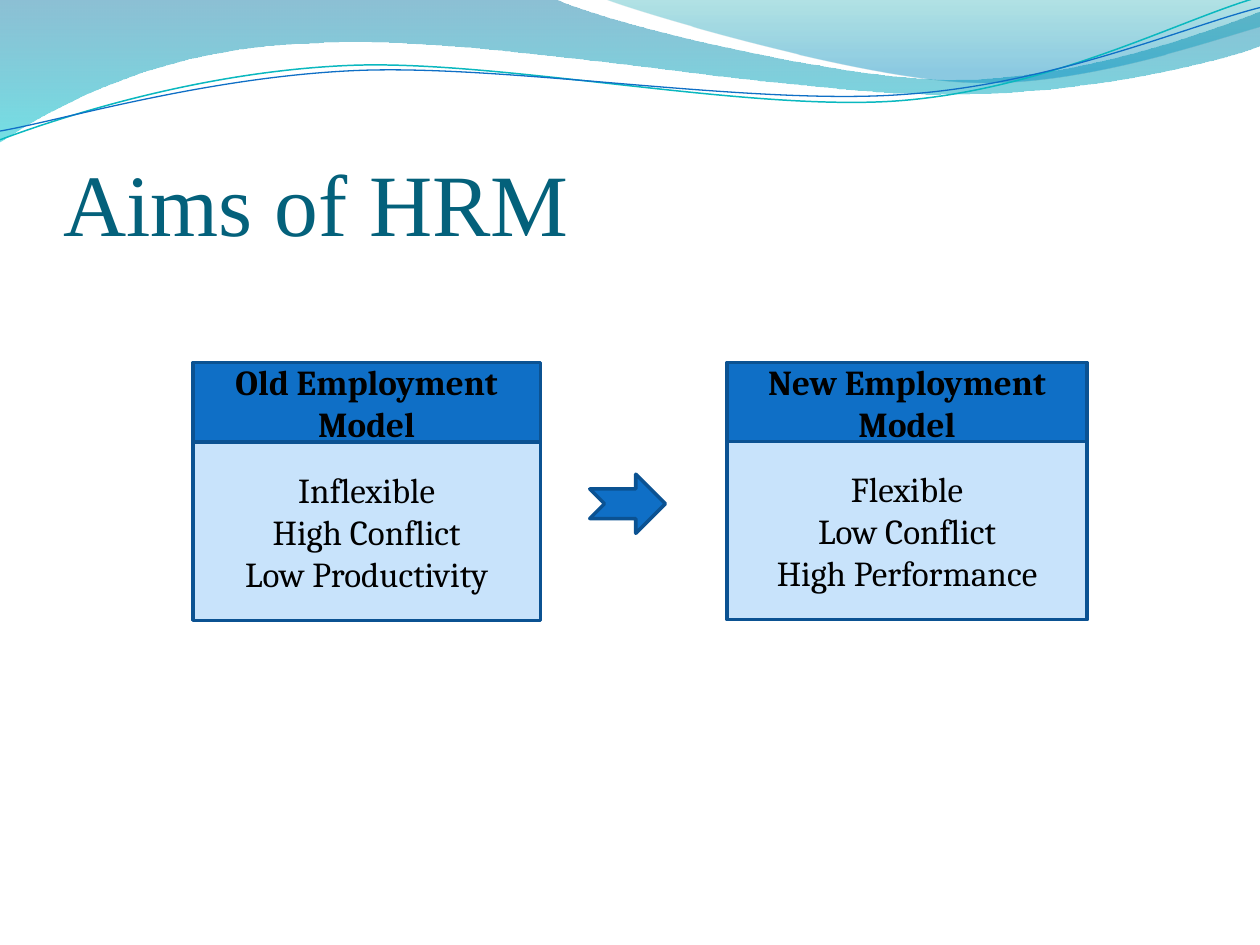
import math

import pptx
import pptx.dml.color
import pptx.enum.shapes
import pptx.enum.text
import pptx.oxml.ns
import pptx.util
from lxml import etree

Pt = pptx.util.Pt
qn = pptx.oxml.ns.qn
SHAPE = pptx.enum.shapes.MSO_SHAPE
ALIGN = pptx.enum.text.PP_ALIGN
ANCHOR = pptx.enum.text.MSO_ANCHOR
COLORS = {
    "title": "04617B", "text": "000000", "header": "0F6FC6",
    "body": "C8E3FB", "border": "0B5292",
    "wave top": "0074A1", "wave bottom": "00C6CF",
    "crest top": "00A1A9", "crest bottom": "008BBF", "teal line": "0AB8BF",
}


def rgb(name):
    return pptx.dml.color.RGBColor.from_string(COLORS[name])


def add_box(shapes, kind, left, top, width, height, fill, lines=(), bold=False):
    shape = shapes.add_shape(kind, Pt(left), Pt(top), Pt(width), Pt(height))
    shape.shadow.inherit = False
    shape.fill.solid()
    shape.fill.fore_color.rgb = rgb(fill)
    shape.line.color.rgb = rgb("border")
    shape.line.width = Pt(2)
    if lines:
        frame = shape.text_frame
        frame.text = "\n".join(lines)
        frame.word_wrap = True
        frame.vertical_anchor = ANCHOR.MIDDLE
        for paragraph in frame.paragraphs:
            paragraph.alignment = ALIGN.CENTER
            font = paragraph.runs[0].font
            font.name, font.size, font.bold = "Cambria", Pt(20), bold
            font.color.rgb = rgb("text")


presentation = pptx.Presentation()
presentation.slide_width, presentation.slide_height = Pt(720), Pt(540)
slide = presentation.slides.add_slide(presentation.slide_layouts[5])

# Waves: a box, then a start point, lines (2 numbers) and Bezier curves (6 numbers).
# Filled waves list gradient stops (color, position, opacity);
# open ones have a line color and width, and a tilted box.
waves = [
    {"box": (-0.7, -0.7, 721.4, 82.1), "tilt": 0,
     "steps": [(0, 0),
               (316.8, -0.7),
               (342.7, 12.2, 478.1, 45.4, 545.8, 45.4),
               (614.2, 45.4, 689.8, 18.7, 720, 6.5),
               (720.7, 25.9),
               (707.8, 31.7, 626.4, 54.7, 537.1, 54),
               (447.8, 54, 275, 20.2, 185, 24.5),
               (92.9, 25.9, 33.1, 59.8, -0.7, 81.4),
               (0, 0)],
     "stops": [("wave top", 0, 45), ("wave bottom", 1, 55)]},
    {"box": (344.9, -0.7, 375.1, 50.4), "tilt": 0,
     "steps": [(344.9, -0.7),
               (366.5, 7.9, 491, 44.6, 553.7, 46.8),
               (616.3, 49.7, 691.9, 23, 720, 15.1),
               (720, 0),
               (344.9, -0.7)],
     "stops": [("crest top", 0, 30), ("crest bottom", 0.8, 45)]},
    {"box": (-1.4, 15.8, 721.4, 51.1), "tilt": -2.7,
     "steps": [(0, 79.9),
               (34.6, 67, 113.8, 41, 199.4, 37.4),
               (284.4, 33.8, 427, 64.1, 513.4, 57.6),
               (599.8, 51.1, 675.4, 10.8, 718.6, -1.4)],
     "line": ("teal line", 0.85)},
    {"box": (-1.4, 21.6, 722.2, 41.8), "tilt": -2.7,
     "steps": [(0, 74.9),
               (33.8, 69.1, 118.1, 43.9, 203.8, 40.3),
               (290.2, 36.7, 429.8, 60.5, 516.2, 54),
               (601.9, 48.2, 677.5, 15.1, 720, 4.3)],
     "line": ("header", 0.75)},
]
for wave in waves:
    left, top, width, height = wave["box"]
    corners = [(Pt(step[-2]), Pt(step[-1])) for step in wave["steps"]]
    builder = slide.shapes.build_freeform(*corners[0])
    builder.add_line_segments(corners[1:], close=False)
    shape = builder.convert_to_shape()
    shape.shadow.inherit = False
    shape.left, shape.top, shape.width, shape.height = map(Pt, wave["box"])
    shape.rotation = wave["tilt"] % 360

    # Bend the outline, with points measured inside the untilted box
    outline = shape.element.find(".//" + qn("a:path"))
    outline.set("w", str(Pt(width)))
    outline.set("h", str(Pt(height)))
    for child in list(outline):
        outline.remove(child)
    cosine, sine = (f(math.radians(-wave["tilt"])) for f in (math.cos, math.sin))
    for index, step in enumerate(wave["steps"]):
        tag = "a:cubicBezTo" if len(step) == 6 else "a:lnTo" if index else "a:moveTo"
        node = etree.SubElement(outline, qn(tag))
        for x, y in zip(step[::2], step[1::2]):
            dx, dy = x - left - width / 2, y - top - height / 2
            point = etree.SubElement(node, qn("a:pt"))
            point.set("x", str(Pt(width / 2 + dx * cosine - dy * sine)))
            point.set("y", str(Pt(height / 2 + dx * sine + dy * cosine)))

    if "stops" in wave:
        etree.SubElement(outline, qn("a:close"))
        shape.line.fill.background()
        shape.fill.gradient()
        shape.fill.gradient_angle = 270
        for stop, (color, position, opacity) in zip(shape.fill.gradient_stops, wave["stops"]):
            stop.color.rgb = rgb(color)
            stop.position = position
        color_tags = shape.element.spPr.iter(qn("a:srgbClr"))
        for tag, (color, position, opacity) in zip(color_tags, wave["stops"]):
            etree.SubElement(tag, qn("a:alpha")).set("val", str(opacity * 1000))
    else:
        color, line_width = wave["line"]
        shape.fill.background()
        shape.line.color.rgb = rgb(color)
        shape.line.width = Pt(line_width)

# Title, in front of the waves
title = slide.shapes.title
slide.shapes.element.append(title.element)
title.left, title.top, title.width, title.height = Pt(36), Pt(55.4), Pt(648), Pt(90)
frame = title.text_frame
frame.text = "Aims of HRM"
frame.auto_size = pptx.enum.text.MSO_AUTO_SIZE.NONE
frame.word_wrap = True
frame.vertical_anchor = ANCHOR.BOTTOM
frame.margin_left = frame.margin_right = frame.margin_bottom = 0
frame.margin_top = Pt(3.6)
paragraph = frame.paragraphs[0]
paragraph.alignment = ALIGN.LEFT
font = paragraph.runs[0].font
font.name, font.size = "Times New Roman", Pt(50)
font.color.rgb = rgb("title")

# Employment models: a header over a list
models = [
    (110.2, 198.7, 252.6, "Old Employment Model",
     ["Inflexible", "High Conflict", "Low Productivity"]),
    (415.4, 205.9, 252.2, "New Employment Model",
     ["Flexible", "Low Conflict", "High Performance"]),
]
for left, width, list_top, heading, traits in models:
    group = slide.shapes.add_group_shape()
    add_box(group.shapes, SHAPE.RECTANGLE, left, 207.2, width, 45.4,
            "header", [heading], bold=True)
    add_box(group.shapes, SHAPE.RECTANGLE, left, list_top, width, 101.9,
            "body", traits)

# Arrow from old to new
add_box(slide.shapes, SHAPE.NOTCHED_RIGHT_ARROW, 337, 271, 43.2, 33.8, "header")

presentation.save("out.pptx")
